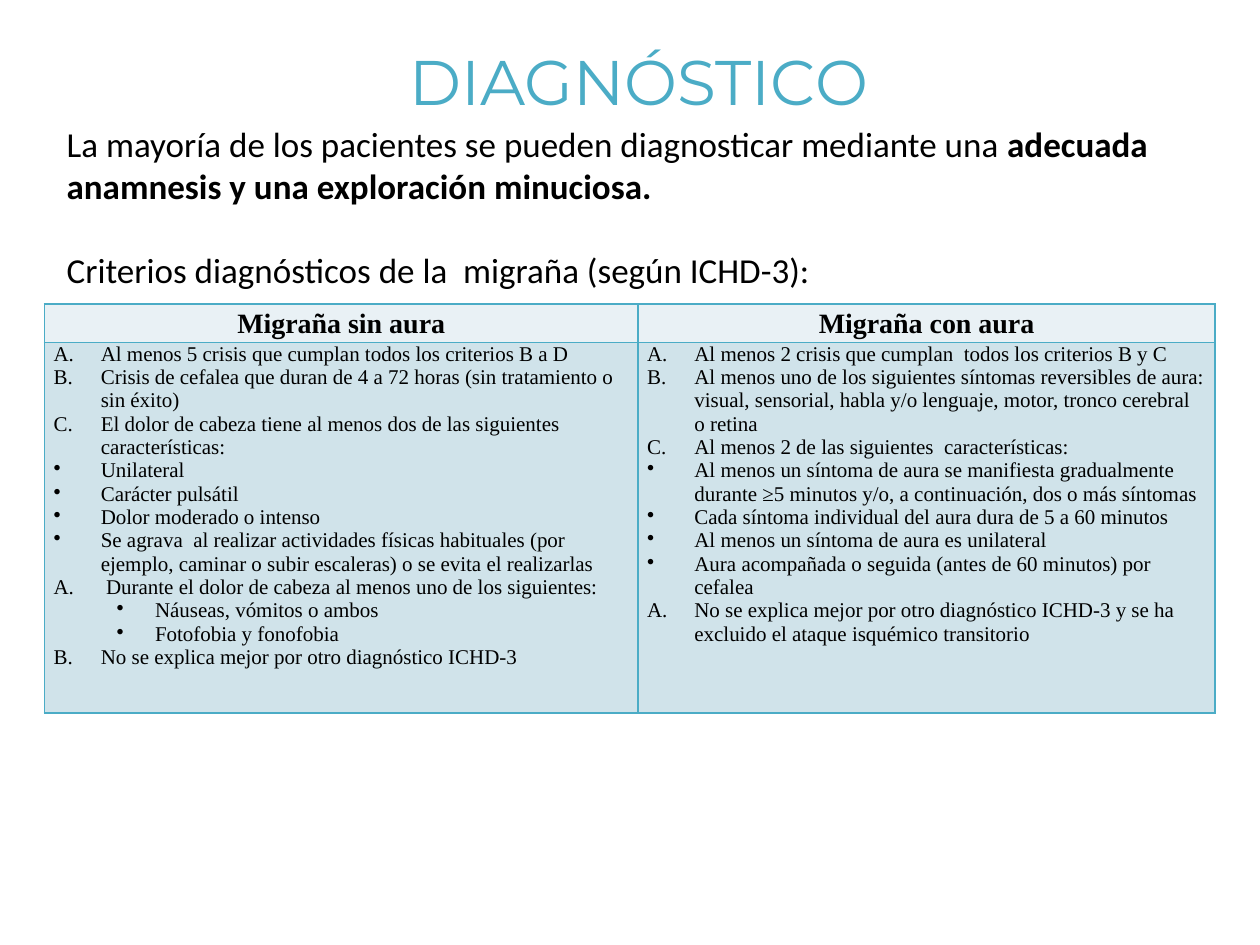
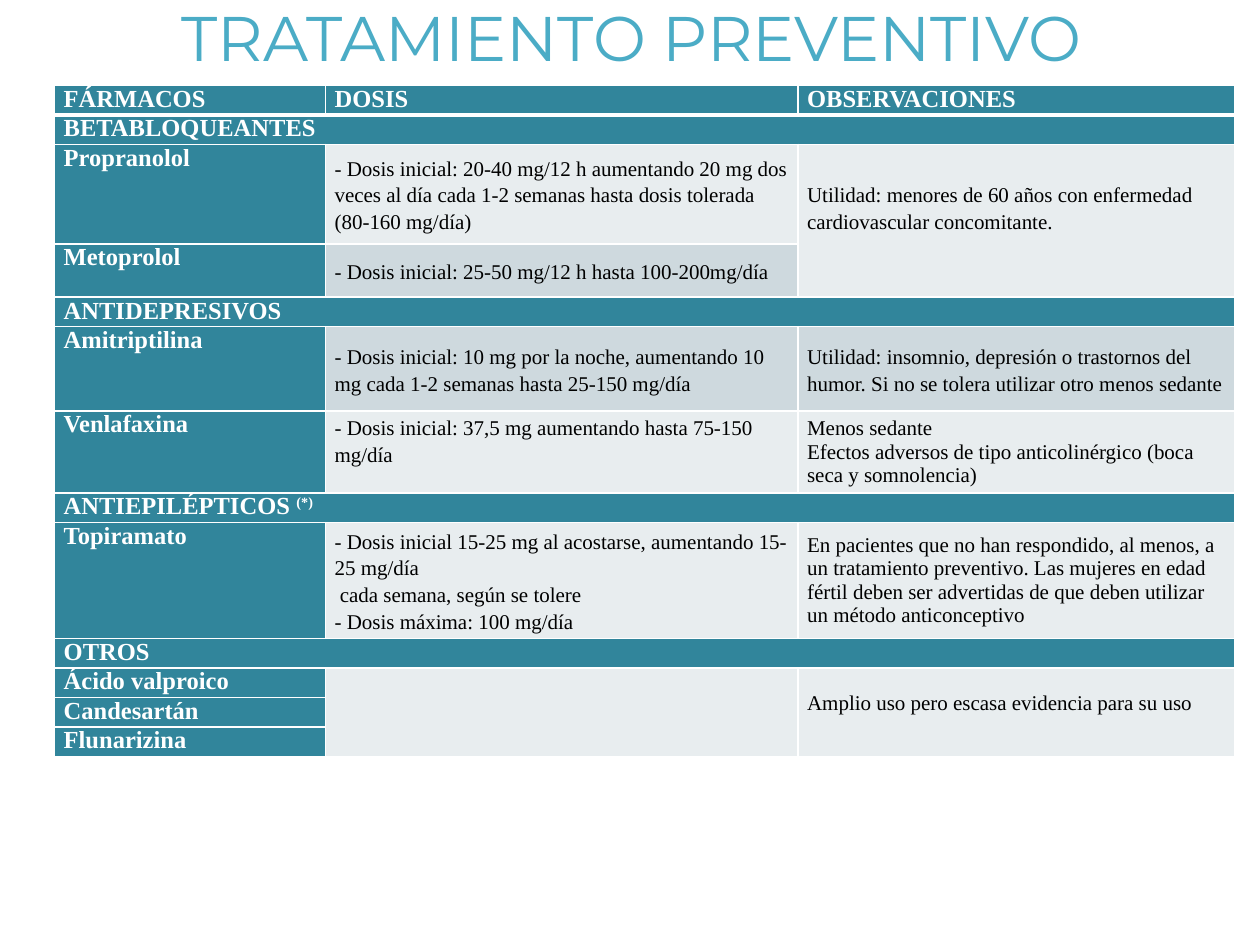
import pptx
import pptx.dml.color
import pptx.enum.text
import pptx.oxml.ns
import pptx.util
from dataclasses import dataclass, replace
from lxml import etree

Pt = pptx.util.Pt
Align = pptx.enum.text.PP_ALIGN
Anchor = pptx.enum.text.MSO_ANCHOR
qn = pptx.oxml.ns.qn


# ---- Theme ----
@dataclass(frozen=True)
class Look:
    font: str
    size: float
    color: str
    bold: bool = False
    align: Align = Align.LEFT
    spacing: float = 1.0


class Theme:
    accent = "4BACC6"
    black = "000000"
    white = "FFFFFF"
    criteria_head, criteria_body = "E9F1F5", "D0E3EA"
    drug, pale, shaded = "31859B", "E8EDEF", "CED9DE"
    serif = "Times New Roman"

    title = Look("Montserrat", 36, accent, align=Align.CENTER)
    intro = Look("Calibri", 20, black)
    criteria_title = Look(serif, 16, black, True, Align.CENTER, 1.15)
    cell = Look(serif, 12, black)
    airy_cell = replace(cell, spacing=1.15)
    drug_name = Look(serif, 14, white, True, Align.JUSTIFY)


@dataclass(frozen=True)
class Run:
    text: str
    bold: bool = False
    raised: bool = False


@dataclass(frozen=True)
class Item:
    text: str
    mark: str


# Mark: level, left margin, hanging indent, bullet element, its attributes
MARKS = {
    "letter": (0, 27, -27, "a:buAutoNum", {"type": "alphaUcPeriod"}),
    "dot": (0, 27, -27, "a:buChar", {"char": "•"}),
    "subdot": (1, 58, -22, "a:buChar", {"char": "•"}),
}


class Deck:
    def __init__(self, theme):
        self.theme = theme
        self.presentation = pptx.Presentation()
        self.presentation.slide_width = Pt(720)
        self.presentation.slide_height = Pt(540)
        self.slide = None

    def new_slide(self):
        self.slide = self.presentation.slides.add_slide(self.presentation.slide_layouts[6])

    def fill_text(self, frame, paragraphs, look):
        """Each paragraph is a string, an Item or a list of Runs."""
        for index, content in enumerate(paragraphs):
            paragraph = frame.paragraphs[0] if index == 0 else frame.add_paragraph()
            paragraph.alignment = look.align
            paragraph.line_spacing = look.spacing
            if isinstance(content, Item):
                self.mark(paragraph, content.mark)
                content = content.text
            runs = [Run(content, look.bold)] if isinstance(content, str) else content
            for part in runs:
                run = paragraph.add_run()
                run.text = part.text
                run.font.name = look.font
                run.font.size = Pt(look.size)
                run.font.bold = part.bold
                run.font.color.rgb = pptx.dml.color.RGBColor.from_string(look.color)
                if part.raised:
                    run._r.get_or_add_rPr().set("baseline", "30000")

    def mark(self, paragraph, kind):
        level, margin, indent, tag, attributes = MARKS[kind]
        paragraph.level = level
        properties = paragraph._p.get_or_add_pPr()
        properties.set("marL", str(Pt(margin)))
        properties.set("indent", str(Pt(indent)))
        etree.SubElement(properties, qn(tag), attributes)

    def text(self, left, top, width, height, paragraphs, look, anchor=Anchor.TOP):
        frame = self.slide.shapes.add_textbox(Pt(left), Pt(top), Pt(width), Pt(height)).text_frame
        frame.word_wrap = True
        frame.vertical_anchor = anchor
        self.fill_text(frame, paragraphs, look)
        return frame

    def title(self, left, top, height, wording):
        self.text(left, top, 648, height, [wording], self.theme.title, Anchor.MIDDLE)

    def table(self, left, top, widths, heights, border):
        grid = self.slide.shapes.add_table(len(heights), len(widths), Pt(left), Pt(top),
                                           Pt(sum(widths)), Pt(sum(heights))).table
        grid.first_row = grid.horz_banding = False
        for column, width in zip(grid.columns, widths):
            column.width = Pt(width)
        for row, height in zip(grid.rows, heights):
            row.height = Pt(height)
        for cell in grid.iter_cells():
            for side in "LRTB":
                self.border(cell, side, border)
        return grid

    def border(self, cell, side, color, width=1):
        properties = cell._tc.get_or_add_tcPr()
        line = properties.find(qn("a:ln" + side))
        if line is None:
            line = etree.SubElement(properties, qn("a:ln" + side))
            fill = etree.SubElement(line, qn("a:solidFill"))
            etree.SubElement(fill, qn("a:srgbClr"), val=color)
        line.set("w", str(Pt(width)))

    def cell(self, cell, paragraphs, look, fill, anchor=Anchor.TOP, above=0, below=0):
        cell.margin_left = cell.margin_right = Pt(5.2)
        cell.margin_top, cell.margin_bottom = Pt(above), Pt(below)
        cell.vertical_anchor = anchor
        cell.fill.solid()
        cell.fill.fore_color.rgb = pptx.dml.color.RGBColor.from_string(fill)
        self.fill_text(cell.text_frame, paragraphs, look)


# ---- Slide 1: diagnostic criteria ----
WITHOUT_AURA = [
    Item("Al menos 5 crisis que cumplan todos los criterios B a D", "letter"),
    Item("Crisis de cefalea que duran de 4 a 72 horas (sin tratamiento o sin éxito)", "letter"),
    Item("El dolor de cabeza tiene al menos dos de las siguientes características:", "letter"),
    Item("Unilateral", "dot"),
    Item("Carácter pulsátil", "dot"),
    Item("Dolor moderado o intenso", "dot"),
    Item("Se agrava  al realizar actividades físicas habituales (por ejemplo, caminar o subir "
         "escaleras) o se evita el realizarlas", "dot"),
    Item(" Durante el dolor de cabeza al menos uno de los siguientes:", "letter"),
    Item("Náuseas, vómitos o ambos", "subdot"),
    Item("Fotofobia y fonofobia", "subdot"),
    Item("No se explica mejor por otro diagnóstico ICHD-3", "letter"),
]
WITH_AURA = [
    Item("Al menos 2 crisis que cumplan  todos los criterios B y C", "letter"),
    Item("Al menos uno de los siguientes síntomas reversibles de aura: visual, sensorial, "
         "habla y/o lenguaje, motor, tronco cerebral o retina", "letter"),
    Item("Al menos 2 de las siguientes  características:", "letter"),
    Item("Al menos un síntoma de aura se manifiesta gradualmente durante ≥5 minutos y/o, "
         "a continuación, dos o más síntomas", "dot"),
    Item("Cada síntoma individual del aura dura de 5 a 60 minutos", "dot"),
    Item("Al menos un síntoma de aura es unilateral", "dot"),
    Item("Aura acompañada o seguida (antes de 60 minutos) por cefalea", "dot"),
    Item("No se explica mejor por otro diagnóstico ICHD-3 y se ha excluido el ataque "
         "isquémico transitorio", "letter"),
]


def diagnosis(deck):
    theme = deck.theme
    deck.new_slide()
    deck.title(41, 9.4, 73.4, "DIAGNÓSTICO")
    intro = deck.text(31, 66.2, 674.6, 133, [
        [Run("La mayoría de los pacientes se pueden diagnosticar mediante una "),
         Run("adecuada anamnesis y una exploración minuciosa.", bold=True)],
        "Criterios diagnósticos de la  migraña (según ICHD-3):",
    ], theme.intro)
    intro.paragraphs[1].space_before = Pt(24)

    criteria = deck.table(25.4, 173.6, [339.2, 329.8], [22.2, 211.6], theme.accent)
    columns = [("Migraña sin aura", WITHOUT_AURA), ("Migraña con aura", WITH_AURA)]
    for column, (heading, items) in enumerate(columns):
        deck.cell(criteria.cell(0, column), [heading], theme.criteria_title, theme.criteria_head)
        deck.cell(criteria.cell(1, column), items, theme.cell, theme.criteria_body)


# ---- Slide 2: preventive drugs ----
HEADINGS = ["FÁRMACOS", "DOSIS", "OBSERVACIONES"]
GROUPS = {
    1: ["BETABLOQUEANTES"],
    4: ["ANTIDEPRESIVOS"],
    7: [[Run("ANTIEPILÉPTICOS ", bold=True), Run("(*)", bold=True, raised=True)]],
    9: ["OTROS"],
}
DRUGS = {
    2: "Propranolol", 3: "Metoprolol", 5: "Amitriptilina", 6: "Venlafaxina",
    8: "Topiramato", 10: "Ácido valproico", 11: "Candesartán", 12: "Flunarizina",
}
DOSES = {
    2: ["- Dosis inicial: 20-40 mg/12 h aumentando 20 mg dos veces al día cada 1-2 semanas "
        "hasta dosis tolerada (80-160 mg/día)"],
    3: ["- Dosis inicial: 25-50 mg/12 h hasta 100-200mg/día"],
    5: ["- Dosis inicial: 10 mg por la noche, aumentando 10 mg cada 1-2 semanas hasta "
        "25-150 mg/día"],
    6: ["- Dosis inicial: 37,5 mg aumentando hasta 75-150 mg/día"],
    8: ["- Dosis inicial 15-25 mg al acostarse, aumentando 15-25 mg/día",
        " cada semana, según se tolere",
        "- Dosis máxima: 100 mg/día"],
    10: [],
}
REMARKS = {
    2: ["Utilidad: menores de 60 años con enfermedad cardiovascular concomitante."],
    5: ["Utilidad: insomnio, depresión o trastornos del humor. Si no se tolera utilizar otro "
        "menos sedante"],
    6: ["Menos sedante",
        "Efectos adversos de tipo anticolinérgico (boca seca y somnolencia)"],
    8: ["En pacientes que no han respondido, al menos, a un tratamiento preventivo. Las mujeres "
        "en edad fértil deben ser advertidas de que deben utilizar un método anticonceptivo"],
    10: ["Amplio uso pero escasa evidencia para su uso"],
}
SHADED_ROWS = {3, 5}
AIRY_REMARKS = {2, 5}
TALL_ROWS = {2: 57, 3: 30.4, 5: 48.2, 6: 46.6, 8: 64.2}


def prevention(deck):
    theme = deck.theme
    deck.new_slide()
    heights = [TALL_ROWS.get(row, 16.56) for row in range(13)]
    drugs = deck.table(31.2, 48.8, [154.8, 270, 249.8], heights, theme.white)

    # Header row with a thick rule below
    for column, heading in enumerate(HEADINGS):
        deck.border(drugs.cell(0, column), "B", theme.white, 3)
        deck.border(drugs.cell(1, column), "T", theme.white, 3)
        deck.cell(drugs.cell(0, column), [heading], theme.drug_name, theme.drug)

    # Group bands and drug names
    for row, group in GROUPS.items():
        drugs.cell(row, 0).merge(drugs.cell(row, 2))
        deck.cell(drugs.cell(row, 0), group, theme.drug_name, theme.drug)
    for row, name in DRUGS.items():
        deck.cell(drugs.cell(row, 0), [name], theme.drug_name, theme.drug)

    # Doses and remarks, some shared by several drugs
    for first, last, column in [(2, 3, 2), (10, 12, 1), (10, 12, 2)]:
        drugs.cell(first, column).merge(drugs.cell(last, column))
    for row, dose in DOSES.items():
        deck.cell(drugs.cell(row, 1), dose, theme.airy_cell,
                  theme.shaded if row in SHADED_ROWS else theme.pale,
                  Anchor.MIDDLE, below=13.8 if row == 6 else 0)
    for row, remark in REMARKS.items():
        shared_by_others = row == 10
        deck.cell(drugs.cell(row, 2), remark,
                  theme.airy_cell if row in AIRY_REMARKS else theme.cell,
                  theme.shaded if row in SHADED_ROWS else theme.pale,
                  Anchor.TOP if shared_by_others else Anchor.MIDDLE,
                  above=13.8 if shared_by_others else 0, below=15.8 if row == 2 else 0)

    deck.title(36.7, -24.5, 90, "TRATAMIENTO PREVENTIVO")


def main():
    deck = Deck(Theme)
    diagnosis(deck)
    prevention(deck)
    deck.presentation.save("out.pptx")


if __name__ == "__main__":
    main()
